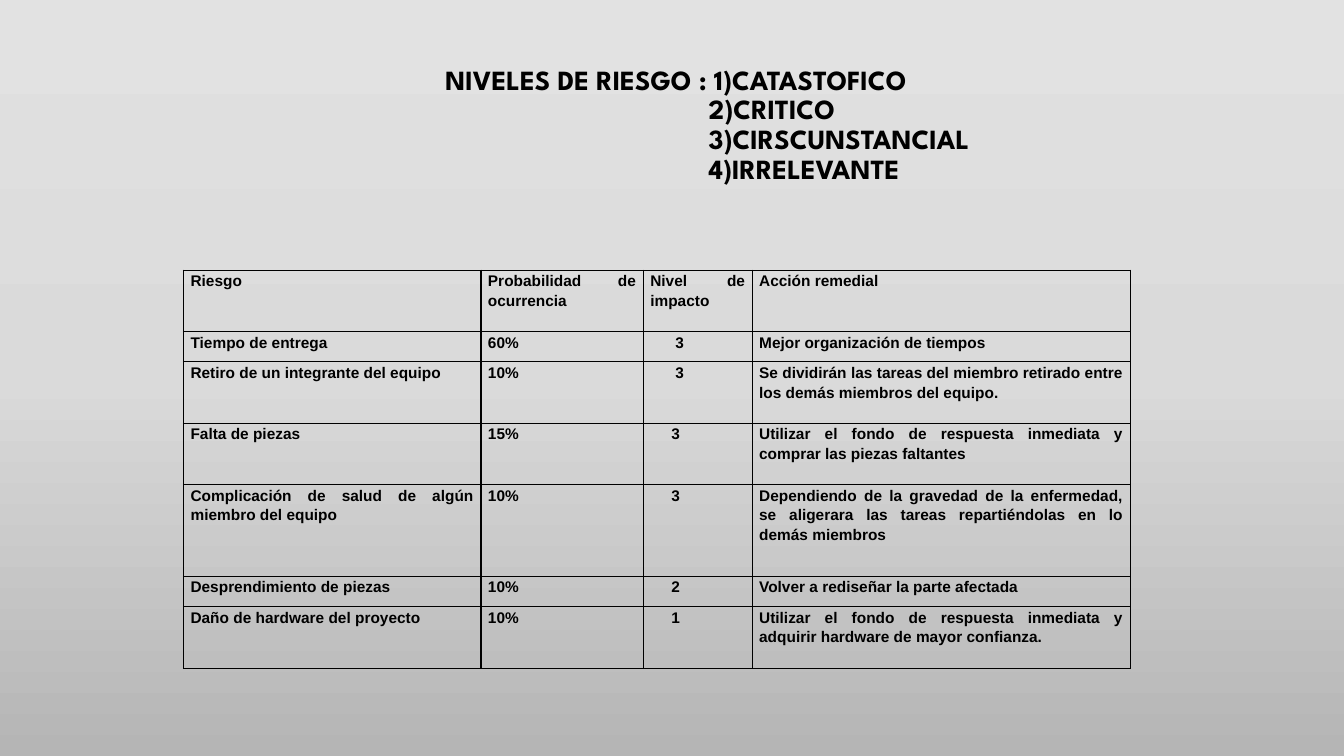
from pptx import Presentation
from pptx.dml.color import RGBColor
from pptx.enum.text import MSO_ANCHOR, PP_ALIGN
from pptx.oxml import parse_xml
from pptx.oxml.ns import nsdecls, qn
from pptx.util import Inches, Pt

BLACK = "000000"
BACKGROUND_STOPS = [(0, "E2E2E2"), (50, "DADADA"), (100, "B5B5B5")]


def write_text(paragraph, text, *, font, size, color=BLACK, align=PP_ALIGN.LEFT,
               line_spacing=1.0, indent=0):
    properties = paragraph._p.get_or_add_pPr()
    properties.set("marL", str(Inches(indent)))
    properties.set("indent", "0")
    paragraph.alignment = align
    paragraph.line_spacing = line_spacing
    run = paragraph.add_run()
    run.text = text
    run.font.name = font
    run.font.size = Pt(size)
    run.font.bold = True
    run.font.color.rgb = RGBColor.from_string(color)


def add_borders(cell, color, width):
    properties = cell._tc.get_or_add_tcPr()
    for position, side in enumerate(("lnL", "lnR", "lnT", "lnB")):
        properties.insert(position, parse_xml(
            f'<a:{side} {nsdecls("a")} w="{Pt(width)}"><a:solidFill>'
            f'<a:srgbClr val="{color}"/></a:solidFill></a:{side}>'))


presentation = Presentation()
presentation.slide_width = Inches(13.33)
presentation.slide_height = Inches(7.5)
slide = presentation.slides.add_slide(presentation.slide_layouts[6])

# Background gradient, light at the top
background_fill = slide.background.fill
background_fill.gradient()
background_fill.gradient_angle = 270
stop_list = slide.element.find(".//" + qn("a:gsLst"))
for stop in list(stop_list):
    stop_list.remove(stop)
for percent, color in BACKGROUND_STOPS:
    stop_list.append(parse_xml(
        f'<a:gs {nsdecls("a")} pos="{percent * 1000}"><a:srgbClr val="{color}"/></a:gs>'))

# Title: the levels line up below the first one
title = slide.shapes.add_textbox(Inches(3.17), Inches(0.84), Inches(9.42), Inches(1.41))
title_frame = title.text_frame
title_frame.word_wrap = True
title_frame.vertical_anchor = MSO_ANCHOR.MIDDLE
title_frame.margin_bottom = Inches(0.64)
title_lines = [
    ("NIVELES DE RIESGO : 1)CATASTOFICO", 1.15),
    ("2)CRITICO", 3.76),
    ("3)CIRSCUNSTANCIAL", 3.76),
    ("4)IRRELEVANTE", 3.76),
]
for index, (line, indent) in enumerate(title_lines):
    paragraph = title_frame.add_paragraph() if index else title_frame.paragraphs[0]
    write_text(paragraph, line, font="League Spartan", size=19.8,
               line_spacing=0.9, indent=indent)

# Risk table
column_widths = [2.95, 1.61, 1.08, 3.75]
row_heights = [0.61, 0.3, 0.61, 0.61, 0.91, 0.3, 0.61]
impact_indents = [0, 0.25, 0.25, 0.21, 0.21, 0.21, 0.21]
IMPACT_COLUMN = 2
risks = [
    ("Riesgo", "Probabilidad de ocurrencia", "Nivel de impacto", "Acción remedial"),
    ("Tiempo de entrega", "60%", "3", "Mejor organización de tiempos"),
    ("Retiro de un integrante del equipo", "10%", "3",
     "Se dividirán las tareas del miembro retirado entre los demás miembros del equipo."),
    ("Falta de piezas", "15%", "3",
     "Utilizar el fondo de respuesta inmediata y comprar las piezas faltantes"),
    ("Complicación de salud de algún miembro del equipo", "10%", "3",
     "Dependiendo de la gravedad de la enfermedad, se aligerara las tareas "
     "repartiéndolas en lo demás miembros"),
    ("Desprendimiento de piezas", "10%", "2", "Volver a rediseñar la parte afectada"),
    ("Daño de hardware del proyecto", "10%", "1",
     "Utilizar el fondo de respuesta inmediata y adquirir hardware de mayor confianza."),
]
table = slide.shapes.add_table(
    len(risks), len(column_widths), Inches(1.82), Inches(2.68),
    Inches(sum(column_widths)), Inches(sum(row_heights))).table
table.first_row = False
table.horz_banding = False
for column, width in zip(table.columns, column_widths):
    column.width = Inches(width)
for row_index, (risk, height) in enumerate(zip(risks, row_heights)):
    table.rows[row_index].height = Inches(height)
    for column_index, text in enumerate(risk):
        cell = table.cell(row_index, column_index)
        cell.fill.background()
        add_borders(cell, BLACK, 1)
        cell.margin_left = cell.margin_right = Inches(0.07)
        cell.margin_top = cell.margin_bottom = 0
        indent = impact_indents[row_index] if column_index == IMPACT_COLUMN else 0
        write_text(cell.text_frame.paragraphs[0], text, font="Arial", size=11,
                   align=PP_ALIGN.JUSTIFY, line_spacing=1.15, indent=indent)

presentation.save("out.pptx")
